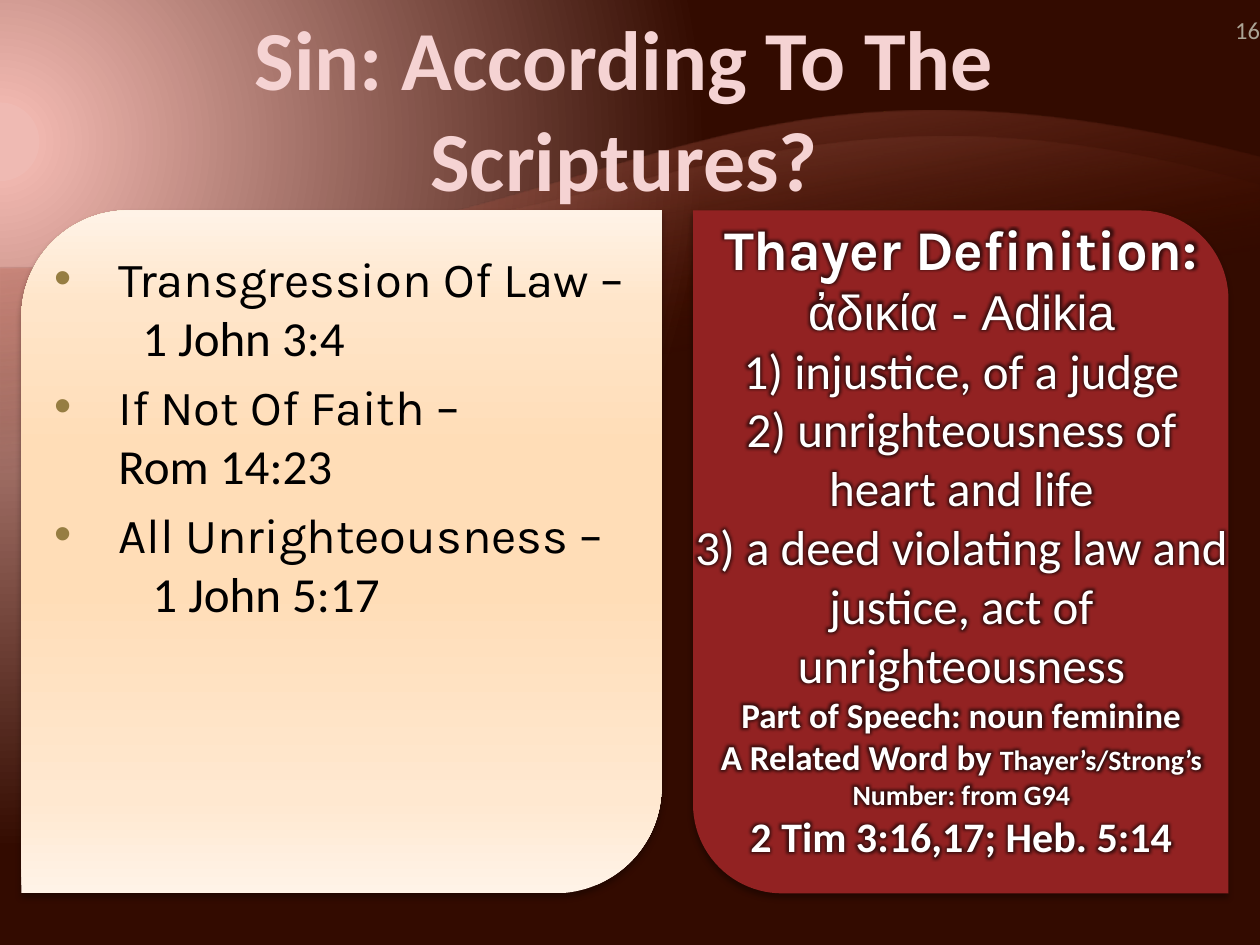
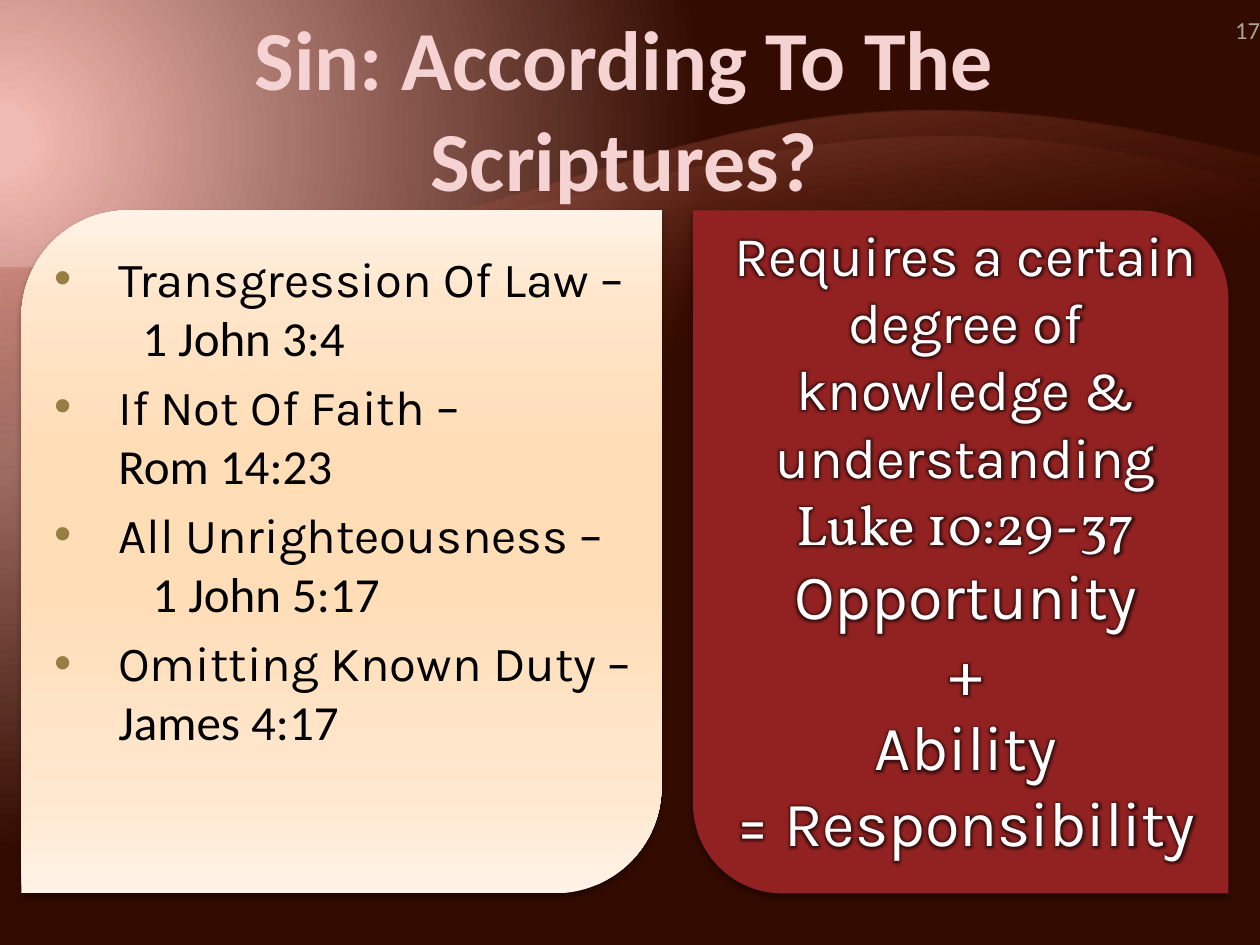
from dataclasses import dataclass

from pptx import Presentation
from pptx.dml.color import RGBColor
from pptx.enum.shapes import MSO_SHAPE
from pptx.enum.text import MSO_ANCHOR, MSO_AUTO_SIZE, PP_ALIGN
from pptx.oxml import parse_xml
from pptx.oxml.ns import nsdecls, qn
from pptx.util import Inches, Pt

COLORS = {
    "title": "F5D3D3", "number": "ABA495", "ink": "000000", "white": "FFFFFF",
    "bullet": "967D42", "red": "922222",
}
SKY = [(5, "EFBAB3", 100), (5, "EFB6AE", 100), (90, "330B00", 100)]
CREAM = [(0, "FFF3E7", 100), (14, "FFE8D0", 100), (45, "FFDDB7", 100),
         (65, "FFDDB7", 100), (86, "FFE5C9", 100), (100, "FFF3E7", 100)]
CIRCLE = ('<a:path path="circle"><a:fillToRect l="20000" t="30000" '
          'r="135000" b="100000"/></a:path>')
TITLE = "Sin: According To The Scriptures?"
INDENT = 0.51


@dataclass
class Box:
    left: float
    top: float
    width: float
    height: float

    def place(self) -> tuple:
        return tuple(map(Inches, (self.left, self.top, self.width, self.height)))


@dataclass
class Wave:
    curve: tuple
    base: float
    tint: str
    alpha: int


@dataclass
class Point:
    text: str
    verse: str
    shift: float = 0


@dataclass
class Line:
    text: str
    size: int = 28
    font: str = "Calibri"
    bold: bool = False
    tail: str = ""


@dataclass
class Page:
    number: int
    points: list
    height: float
    box: Box
    lines: list


WAVES = [
    Wave(((0, 2.13), (5, 2.13), (5.34, 0.05), (10, 1.25)), 7.33, "EB9084", 55),
    Wave(((0, 2.13), (5, 2.13), (5.98, 0.31), (10, 1.47)), 6.37, "F0B4AC", 30),
]
POINTS = [
    Point("Transgression Of Law –", "1 John 3:4", 0.19),
    Point("If Not Of Faith –", "Rom 14:23"),
    Point("All Unrighteousness –", "1 John 5:17", 0.27),
    Point("Omitting Known Duty –", "James 4:17"),
]
PAGES = [
    Page(16, POINTS[:3], 3.1, Box(5.42, 1.65, 4.42, 5.35), [
        Line("Thayer Definition:", 32, "Karla", True),
        Line("ἀδικία - Adikia", font="Arial"),
        Line("1) injustice, of a judge"),
        Line("2) unrighteousness of heart and life"),
        Line("3) a deed violating law and justice, act of unrighteousness"),
        Line("Part of Speech: noun feminine", 20, bold=True),
        Line("A Related Word by ", 20, bold=True,
             tail="Thayer’s/Strong’s Number: from G94"),
        Line("2 Tim 3:16,17; Heb. 5:14", 24, bold=True),
    ]),
    Page(17, POINTS, 4.12, Box(5.5, 1.7, 4.33, 5.22), [
        Line("Requires a certain degree of knowledge & understanding", 32, "Karla"),
        Line("Luke 10:29-37", 32, "Vollkorn"),
        *[Line(word, 36, "Karla")
          for word in ("Opportunity", "+", "Ability", "= Responsibility")],
    ]),
]


def blend(item, stops: list, shade: str) -> None:
    marks = "".join(
        f'<a:gs pos="{pos * 1000}"><a:srgbClr val="{color}">'
        f'<a:alpha val="{alpha * 1000}"/></a:srgbClr></a:gs>'
        for pos, color, alpha in stops)
    old = next(item.element.iter(qn("a:gradFill")))
    old.getparent().replace(old, parse_xml(
        f'<a:gradFill {nsdecls("a")} rotWithShape="1">'
        f'<a:gsLst>{marks}</a:gsLst>{shade}</a:gradFill>'))


def slant(angle: int) -> str:
    return f'<a:lin ang="{angle * 60000}" scaled="0"/>'


def write(para, text: str, *, size: int = 28, font: str = "Calibri",
          color: str = "ink", bold: bool = False, align=PP_ALIGN.LEFT,
          before: int = 0, glow: bool = False) -> None:
    para.alignment = align
    para.space_before = Pt(before)
    run = para.add_run()
    run.text = text
    run.font.size = Pt(size)
    run.font.name = font
    run.font.bold = bold
    run.font.color.rgb = RGBColor.from_string(COLORS[color])
    if glow:
        fill = run.font._element.find(qn("a:solidFill"))
        fill.addnext(parse_xml(
            f'<a:effectLst {nsdecls("a")}><a:glow rad="63500">'
            '<a:srgbClr val="000000"><a:alpha val="60000"/></a:srgbClr>'
            '</a:glow></a:effectLst>'))


def indent(para, left: float, bullet: bool) -> None:
    props = para._p.get_or_add_pPr()
    props.set("marL", str(Inches(left)))
    props.set("indent", str(Inches(-left if bullet else 0)))
    if not bullet:
        props.append(parse_xml(f'<a:buNone {nsdecls("a")}/>'))
        return
    for part in (f'<a:buClr {nsdecls("a")}><a:srgbClr val="{COLORS["bullet"]}"/></a:buClr>',
                 f'<a:buFont {nsdecls("a")} typeface="Arial"/>',
                 f'<a:buChar {nsdecls("a")} char="•"/>'):
        props.append(parse_xml(part))


def fit(shape, box: Box, anchor=MSO_ANCHOR.TOP):
    shape.left, shape.top, shape.width, shape.height = box.place()
    frame = shape.text_frame
    frame.word_wrap = True
    frame.auto_size = MSO_AUTO_SIZE.NONE
    frame.vertical_anchor = anchor
    shape.element.getparent().append(shape.element)
    return frame


def paras(frame):
    yield frame.paragraphs[0]
    while True:
        yield frame.add_paragraph()


def draw_wave(slide, wave: Wave) -> None:
    steps = 60
    dots = []
    for step in range(steps + 1):
        t = step / steps
        parts = ((1 - t) ** 3, 3 * t * (1 - t) ** 2, 3 * t * t * (1 - t), t ** 3)
        dots.append(tuple(
            Inches(sum(p * dot[axis] for p, dot in zip(parts, wave.curve)))
            for axis in (0, 1)))
    pen = slide.shapes.build_freeform(Inches(10), Inches(wave.base))
    pen.add_line_segments([(Inches(0), Inches(wave.base)), *dots], close=True)
    shape = pen.convert_to_shape()
    shape.shadow.inherit = False
    shape.line.fill.background()
    shape.fill.gradient()
    blend(shape, [(65, "6B1700", 0), (100, wave.tint, wave.alpha)], slant(260))


def draw_panel(slide, box: Box, flip: bool):
    panel = slide.shapes.add_shape(MSO_SHAPE.ROUND_2_DIAG_RECTANGLE, *box.place())
    panel.line.fill.background()
    panel.shadow.inherit = False
    if flip:
        panel.adjustments[0], panel.adjustments[1] = 0, 0.16667
    shade = next(panel.element.iter(qn("a:effectLst")))
    shade.append(parse_xml(
        f'<a:outerShdw {nsdecls("a")} blurRad="{Pt(3.5)}" dist="{Pt(2.2)}" '
        'dir="5400000" rotWithShape="0"><a:srgbClr val="000000">'
        '<a:alpha val="32000"/></a:srgbClr></a:outerShdw>'))
    return panel


def draw_page(deck, page: Page) -> None:
    slide = deck.slides.add_slide(deck.slide_layouts[1])
    for wave in WAVES:
        draw_wave(slide, wave)
    red = draw_panel(slide, Box(5.5, 1.67, 4.25, 5.42), True)
    red.fill.solid()
    red.fill.fore_color.rgb = RGBColor.from_string(COLORS["red"])
    cream = draw_panel(slide, Box(0.17, 1.67, 5.08, 5.42), False)
    cream.fill.gradient()
    blend(cream, CREAM, slant(270))

    spot = Box(9.42, 0, 0.58, 0.4)
    frame = fit(slide.shapes.add_textbox(*spot.place()), spot, MSO_ANCHOR.BOTTOM)
    frame.margin_right = Inches(0)
    write(frame.paragraphs[0], str(page.number), size=14, color="number",
          align=PP_ALIGN.RIGHT)

    frame = fit(slide.placeholders[1], Box(0.33, 1.92, 4.83, page.height))
    rows = paras(frame)
    for point in page.points:
        para = next(rows)
        write(para, point.text, font="Karla", before=6)
        indent(para, INDENT, True)
        para = next(rows)
        write(para, point.verse)
        indent(para, INDENT + point.shift, False)

    frame = fit(slide.shapes.add_textbox(*page.box.place()), page.box)
    for line, para in zip(page.lines, paras(frame)):
        style = dict(font=line.font, bold=line.bold, color="white",
                     align=PP_ALIGN.CENTER, glow=True)
        write(para, line.text, size=line.size, **style)
        if line.tail:
            write(para, line.tail, size=16, **style)

    frame = fit(slide.shapes.title, Box(0.33, 0, 9.25, 1.72))
    write(frame.paragraphs[0], TITLE, size=48, color="title", bold=True,
          align=PP_ALIGN.CENTER)


def main() -> None:
    deck = Presentation()
    deck.slide_width, deck.slide_height = Inches(10), Inches(7.5)
    master = deck.slide_master
    master.background.fill.gradient()
    blend(master, SKY, CIRCLE)
    for page in PAGES:
        draw_page(deck, page)
    deck.save("out.pptx")


if __name__ == "__main__":
    main()
